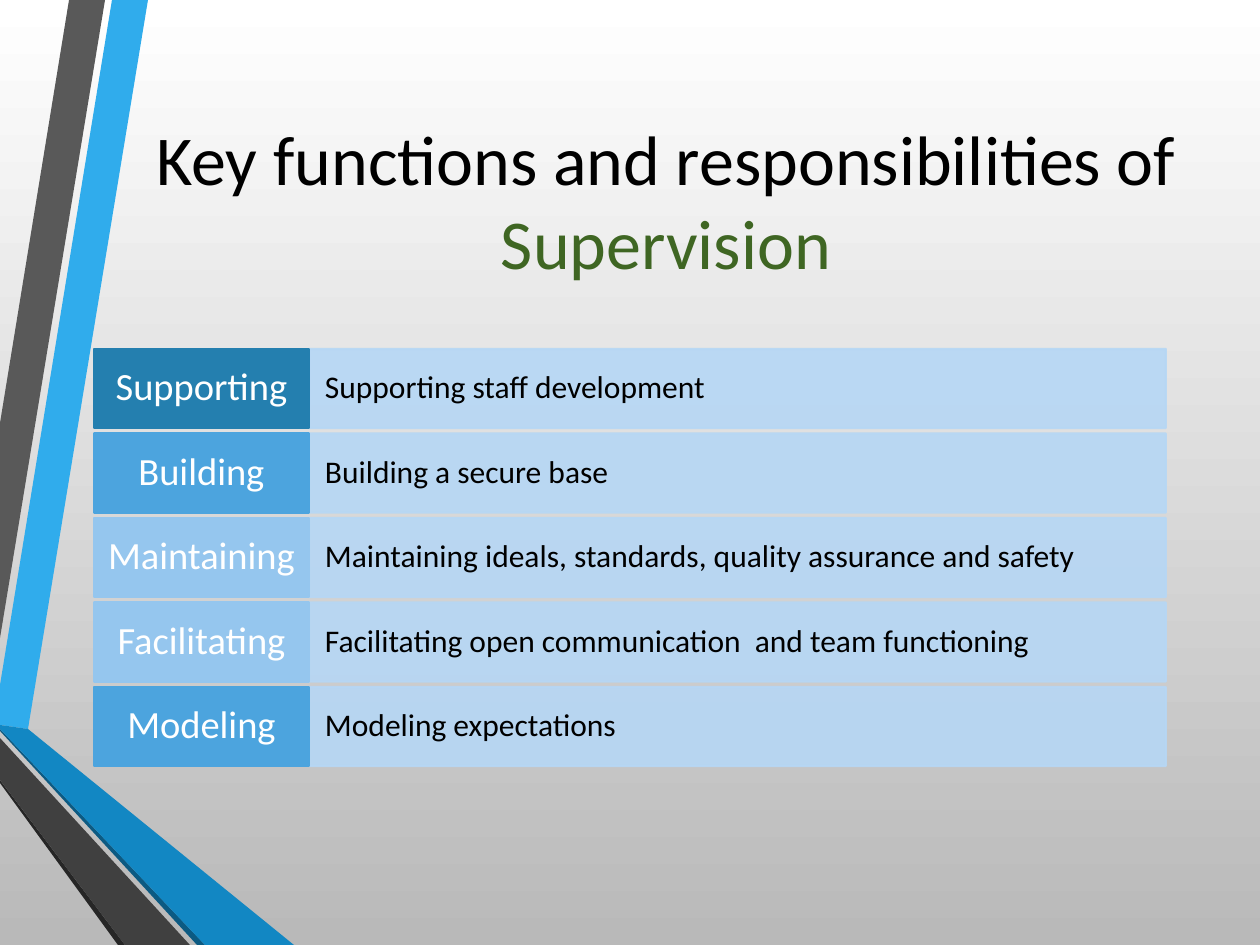
from lxml.etree import SubElement
from pptx import Presentation
from pptx.dml.color import RGBColor
from pptx.enum.shapes import MSO_SHAPE
from pptx.enum.text import MSO_ANCHOR, PP_ALIGN
from pptx.oxml.ns import qn
from pptx.util import Pt

PX = 914400 / 126
WIDTH, HEIGHT = 1260, 945
FONT = "Calibri"

BLACK = RGBColor(0x00, 0x00, 0x00)
WHITE = RGBColor(0xFF, 0xFF, 0xFF)
GREY = RGBColor(0xB9, 0xB9, 0xB9)
GREEN = RGBColor(0x3F, 0x66, 0x23)
PALE_BLUE = RGBColor(0xB6, 0xD7, 0xF5)
DEEP_BLUE = RGBColor(0x24, 0x7F, 0xAF)
MID_BLUE = RGBColor(0x4C, 0xA4, 0xDE)
LIGHT_BLUE = RGBColor(0x95, 0xC6, 0xEE)

TITLE = [("Key functions and responsibilities of ", BLACK), ("Supervision", GREEN)]

FUNCTIONS = [
    ("Supporting", "Supporting staff development", DEEP_BLUE),
    ("Building", "Building a secure base", MID_BLUE),
    ("Maintaining", "Maintaining ideals, standards, quality assurance and safety", LIGHT_BLUE),
    ("Facilitating", "Facilitating open communication  and team functioning", LIGHT_BLUE),
    ("Modeling", "Modeling expectations", MID_BLUE),
]

# Ribbon outlines in px, back to front
RIBBONS = [
    (RGBColor(0x30, 0xAC, 0xEC), [(0, 685), (0, 725), (28, 729), (148, 0), (112, 0)]),
    (RGBColor(0x59, 0x59, 0x59), [(105, 0), (69, 0), (0, 423), (0, 638)]),
    (RGBColor(0x26, 0x26, 0x26), [(0, 780), (0, 783), (118, 945), (125, 945)]),
    (RGBColor(0x0C, 0x5A, 0x82), [(0, 729), (0, 731), (197, 945), (205, 945)]),
    (RGBColor(0x12, 0x87, 0xC3), [(0, 729), (205, 945), (294, 945), (28, 729), (0, 725)]),
    (RGBColor(0x40, 0x40, 0x40), [(0, 780), (125, 945), (190, 945), (0, 738)]),
]

LABEL_LEFT, LABEL_WIDTH = 94, 215
DETAIL_LEFT, DETAIL_WIDTH = 309, 857
ROWS_TOP, ROWS_BOTTOM, ROW_HEIGHT = 349, 766, 79


def emu(*lengths):
    return [round(length * PX) for length in lengths]


def style_run(run, size, color):
    run.font.name = FONT
    run.font.size = Pt(size)
    run.font.color.rgb = color


def set_opacity(fill, percent):
    color = fill._xPr.find(qn("a:solidFill"))[0]
    SubElement(color, qn("a:alpha")).set("val", str(percent * 1000))


def add_ribbon(slide, color, points):
    builder = slide.shapes.build_freeform(*points[0], scale=PX)
    builder.add_line_segments(points[1:], close=True)
    shape = builder.convert_to_shape()
    shape.shadow.inherit = False
    shape.fill.solid()
    shape.fill.fore_color.rgb = color
    shape.line.fill.background()


def add_cell(slide, box, text, fill, size, color, align, insets, opacity=100):
    shape = slide.shapes.add_shape(MSO_SHAPE.RECTANGLE, *emu(*box))
    shape.shadow.inherit = False
    shape.line.width = Pt(1.25)
    for paint in (shape.fill, shape.line.fill):
        paint.solid()
        paint.fore_color.rgb = fill
        if opacity < 100:
            set_opacity(paint, opacity)
    frame = shape.text_frame
    frame.word_wrap = True
    frame.vertical_anchor = MSO_ANCHOR.MIDDLE
    side, end = emu(*insets)
    frame.margin_left = frame.margin_right = side
    frame.margin_top = frame.margin_bottom = end
    frame.text = text
    paragraph = frame.paragraphs[0]
    paragraph.alignment = align
    paragraph.line_spacing = 0.9
    style_run(paragraph.runs[0], size, color)


def main():
    presentation = Presentation()
    presentation.slide_width, presentation.slide_height = emu(WIDTH, HEIGHT)
    slide = presentation.slides.add_slide(presentation.slide_layouts[6])

    # Background, white at the top to grey at the bottom
    background = slide.background.fill
    background.gradient()
    background.gradient_angle = 270
    for stop, color in zip(background.gradient_stops, (WHITE, GREY)):
        stop.color.rgb = color

    # Ribbons on the left
    for color, points in RIBBONS:
        add_ribbon(slide, color, points)

    # Title
    frame = slide.shapes.add_textbox(*emu(135, 63, 1062, 273)).text_frame
    frame.word_wrap = True
    frame.vertical_anchor = MSO_ANCHOR.MIDDLE
    paragraph = frame.paragraphs[0]
    paragraph.alignment = PP_ALIGN.CENTER
    for text, color in TITLE:
        run = paragraph.add_run()
        run.text = text
        style_run(run, 40, color)

    # Rows of label and description
    pitch = (ROWS_BOTTOM - ROWS_TOP - ROW_HEIGHT) / (len(FUNCTIONS) - 1)
    for row, (label, detail, color) in enumerate(FUNCTIONS):
        top = ROWS_TOP + row * pitch
        add_cell(slide, (DETAIL_LEFT, top, DETAIL_WIDTH, ROW_HEIGHT), detail,
                 PALE_BLUE, 18, BLACK, PP_ALIGN.LEFT, (16, 20), opacity=90)
        add_cell(slide, (LABEL_LEFT, top, LABEL_WIDTH, ROW_HEIGHT), label,
                 color, 22, WHITE, PP_ALIGN.CENTER, (11, 8))

    presentation.save("out.pptx")


if __name__ == "__main__":
    main()
